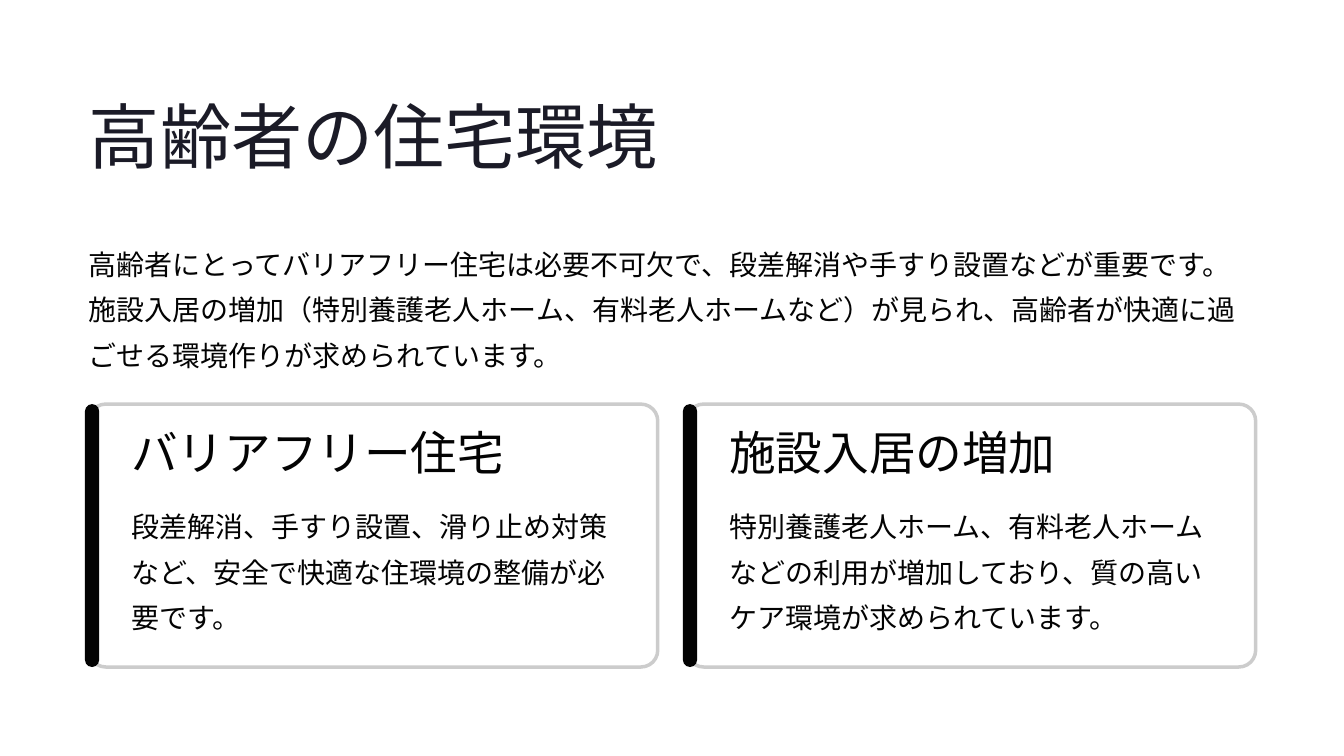
from lxml.etree import SubElement
from pptx import Presentation
from pptx.dml.color import RGBColor
from pptx.enum.lang import MSO_LANGUAGE_ID as Language
from pptx.enum.shapes import MSO_SHAPE as Shape
from pptx.oxml.ns import qn
from pptx.util import Cm, Pt

# Content
TITLE = "高齢者の住宅環境"
INTRO = (
    "高齢者にとってバリアフリー住宅は必要不可欠で、段差解消や手すり設置などが重要です。"
    "施設入居の増加（特別養護老人ホーム、有料老人ホームなど）が見られ、"
    "高齢者が快適に過ごせる環境作りが求められています。"
)
CARDS = [
    ("バリアフリー住宅",
     "段差解消、手すり設置、滑り止め対策など、安全で快適な住環境の整備が必要です。"),
    ("施設入居の増加",
     "特別養護老人ホーム、有料老人ホームなどの利用が増加しており、"
     "質の高いケア環境が求められています。"),
]

# Style
NAVY = RGBColor(0x1B, 0x1B, 0x27)
BLACK = RGBColor(0x03, 0x03, 0x03)
GRAY = RGBColor(0xCC, 0xCC, 0xCC)
WHITE = RGBColor(0xFF, 0xFF, 0xFF)
HEADING = {"font": "Inter"}
BODY = {"font": "Karla", "size": 24, "spacing": 39}

# Layout in centimetres
MARGIN = 2.69
CARD_TOP, CARD_WIDTH, CARD_HEIGHT, CARD_STEP = 12.22, 17.2, 7.95, 18.08
BAR_WIDTH, BAR_OFFSET = 0.43, -0.12
TEXT_INDENT, TEXT_WIDTH = 1.28, 14.96


def add_text(slide, text, left, top, width, height, *, font, size, spacing, color=BLACK):
    box = slide.shapes.add_textbox(Cm(left), Cm(top), Cm(width), Cm(height))
    frame = box.text_frame
    frame.word_wrap = True
    frame.margin_left = frame.margin_right = 0
    frame.margin_top = frame.margin_bottom = 0
    paragraph = frame.paragraphs[0]
    paragraph.line_spacing = Pt(spacing)
    run = paragraph.add_run()
    run.text = text
    run.font.name = font
    run.font.size = Pt(size)
    run.font.color.rgb = color
    run.font.language_id = Language.JAPANESE
    # East Asian typeface
    SubElement(run.font._element, qn("a:ea"), typeface=font)


def add_rounded(slide, left, width, radius, fill, line=None, opacity=None):
    shape = slide.shapes.add_shape(
        Shape.ROUNDED_RECTANGLE, Cm(left), Cm(CARD_TOP), Cm(width), Cm(CARD_HEIGHT))
    shape.shadow.inherit = False
    shape.adjustments[0] = radius
    shape.fill.solid()
    shape.fill.fore_color.rgb = fill
    if opacity is not None:
        color = shape._element.spPr.find(qn("a:solidFill"))[0]
        SubElement(color, qn("a:alpha"), val=str(opacity * 1000))
    if line is None:
        shape.line.fill.background()
    else:
        shape.line.color.rgb = line
        shape.line.width = Pt(3)


def add_card(slide, left, heading, body):
    add_rounded(slide, left, CARD_WIDTH, 0.064, WHITE, line=GRAY, opacity=95)
    add_rounded(slide, left + BAR_OFFSET, BAR_WIDTH, 0.5, BLACK)
    text_left = left + TEXT_INDENT
    add_text(slide, heading, text_left, 13.18, TEXT_WIDTH, 1.35,
             size=40, spacing=38, **HEADING)
    add_text(slide, body, text_left, 15.06, TEXT_WIDTH, 4.14, **BODY)


def main():
    presentation = Presentation()
    presentation.slide_width, presentation.slide_height = Cm(40.64), Cm(22.86)
    slide = presentation.slides.add_slide(presentation.slide_layouts[6])

    # Title and introduction
    add_text(slide, TITLE, MARGIN, MARGIN, 21.56, 2.69,
             size=61, spacing=76, color=NAVY, **HEADING)
    add_text(slide, INTRO, MARGIN, 7.11, 35.28, 4.14, **BODY)

    # Cards
    for index, (heading, body) in enumerate(CARDS):
        add_card(slide, MARGIN + index * CARD_STEP, heading, body)

    presentation.save("out.pptx")


if __name__ == "__main__":
    main()
